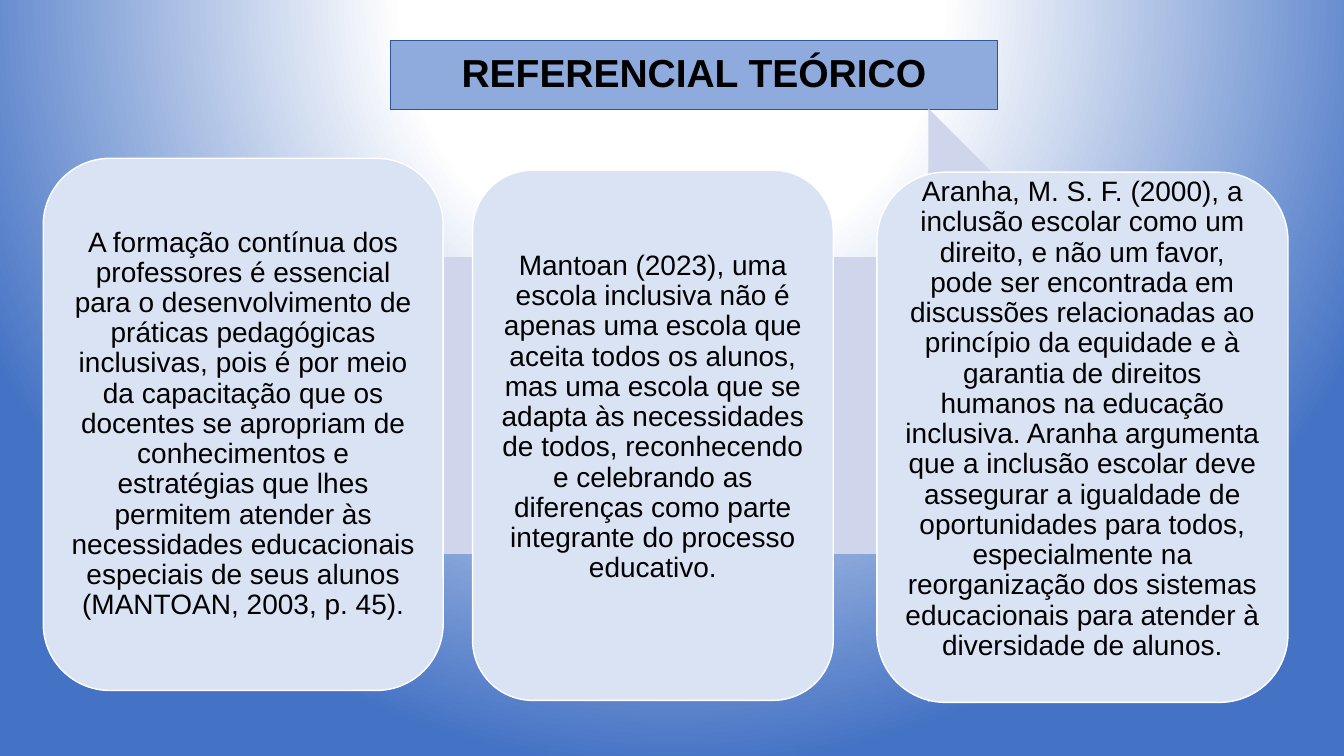
from dataclasses import dataclass

from pptx import Presentation
from pptx.dml.color import RGBColor
from pptx.enum.shapes import MSO_SHAPE
from pptx.enum.text import MSO_ANCHOR, MSO_AUTO_SIZE, PP_ALIGN
from pptx.oxml import parse_xml
from pptx.oxml.ns import nsdecls
from pptx.util import Cm, Pt


@dataclass(frozen=True)
class Theme:
    font: str = "Arial"
    text: str = "000000"
    white: str = "FFFFFF"
    blue: str = "4472C4"
    title_fill: str = "8FAADC"
    title_line: str = "2F5597"
    arrow: str = "CFD5EA"
    card: str = "DAE3F3"
    title_size: float = 27.9
    body_size: float = 20


THEME = Theme()

# Card: left, top, width, height, bottom inset (cm), text
CARDS = [
    (1.09, 3.99, 10.08, 13.41, 0.2,
     "A formação contínua dos professores é essencial para o desenvolvimento "
     "de práticas pedagógicas inclusivas, pois é por meio da capacitação que os "
     "docentes se apropriam de conhecimentos e estratégias que lhes permitem "
     "atender às necessidades educacionais especiais de seus alunos "
     "(MANTOAN, 2003, p. 45)."),
    (11.91, 4.29, 9.09, 13.36, 1.1,
     "Mantoan (2023), uma escola inclusiva não é apenas uma escola que aceita "
     "todos os alunos, mas uma escola que se adapta às necessidades de todos, "
     "reconhecendo e celebrando as diferenças como parte integrante do "
     "processo educativo."),
    (22.1, 4.34, 10.36, 13.36, 1.1,
     "Aranha, M. S. F. (2000), a inclusão escolar como um direito, e não um "
     "favor, pode ser encontrada em discussões relacionadas ao princípio da "
     "equidade e à garantia de direitos humanos na educação inclusiva. Aranha "
     "argumenta que a inclusão escolar deve assegurar a igualdade de "
     "oportunidades para todos, especialmente na reorganização dos sistemas "
     "educacionais para atender à diversidade de alunos."),
]


def set_background(s):
    """Radial gradient, white at the top centre and blue at the edges."""
    stops = [(0, THEME.white), (35, THEME.white), (100, THEME.blue)]
    gs = "".join(f'<a:gs pos="{pos * 1000}"><a:srgbClr val="{color}"/></a:gs>'
                 for pos, color in stops)
    bg = parse_xml(
        f'<p:bg {nsdecls("p", "a")}><p:bgPr><a:gradFill rotWithShape="1">'
        f'<a:gsLst>{gs}</a:gsLst><a:path path="circle">'
        '<a:fillToRect l="50000" t="-80000" r="50000" b="180000"/></a:path>'
        '</a:gradFill><a:effectLst/></p:bgPr></p:bg>')
    s.element.cSld.insert(0, bg)


def paint(sp, fill, line=None, width=1):
    sp.fill.solid()
    sp.fill.fore_color.rgb = RGBColor.from_string(fill)
    if line:
        sp.line.color.rgb = RGBColor.from_string(line)
        sp.line.width = Pt(width)
    else:
        sp.line.fill.background()


def write(sp, text, *, size, bold=False, inset=0.2, bottom=0.2):
    tf = sp.text_frame
    tf.word_wrap = True
    tf.auto_size = MSO_AUTO_SIZE.NONE
    tf.vertical_anchor = MSO_ANCHOR.MIDDLE
    tf.margin_left = tf.margin_right = tf.margin_top = Cm(inset)
    tf.margin_bottom = Cm(bottom)
    p = tf.paragraphs[0]
    p.alignment = PP_ALIGN.CENTER
    p.line_spacing = 0.9
    r = p.add_run()
    r.text = text
    r.font.name = THEME.font
    r.font.size = Pt(size)
    r.font.bold = bold
    r.font.color.rgb = RGBColor.from_string(THEME.text)


def add_title(s, text):
    sp = s.shapes.title
    sp.left, sp.top, sp.width, sp.height = Cm(9.83), Cm(1.02), Cm(15.32), Cm(1.75)
    paint(sp, THEME.title_fill, THEME.title_line, 0.75)
    write(sp, text, size=THEME.title_size, bold=True)


def add_block(s, kind, left, top, width, height, fill, line=None):
    sp = s.shapes.add_shape(kind, Cm(left), Cm(top), Cm(width), Cm(height))
    sp.shadow.inherit = False
    paint(sp, fill, line)
    return sp


def main():
    prs = Presentation()
    prs.slide_width, prs.slide_height = Cm(33.87), Cm(19.05)
    s = prs.slides.add_slide(prs.slide_layouts[5])
    set_background(s)

    # Title bar
    add_title(s, "REFERENCIAL TEÓRICO")

    # Arrow behind the cards
    add_block(s, MSO_SHAPE.RIGHT_ARROW, 2.97, 2.74, 27.91, 14.96, THEME.arrow)

    # Cards with the authors' ideas
    for left, top, width, height, bottom, text in CARDS:
        card = add_block(s, MSO_SHAPE.ROUNDED_RECTANGLE, left, top, width, height,
                         THEME.card, THEME.white)
        write(card, text, size=THEME.body_size, bottom=bottom)

    prs.save("out.pptx")


if __name__ == "__main__":
    main()
